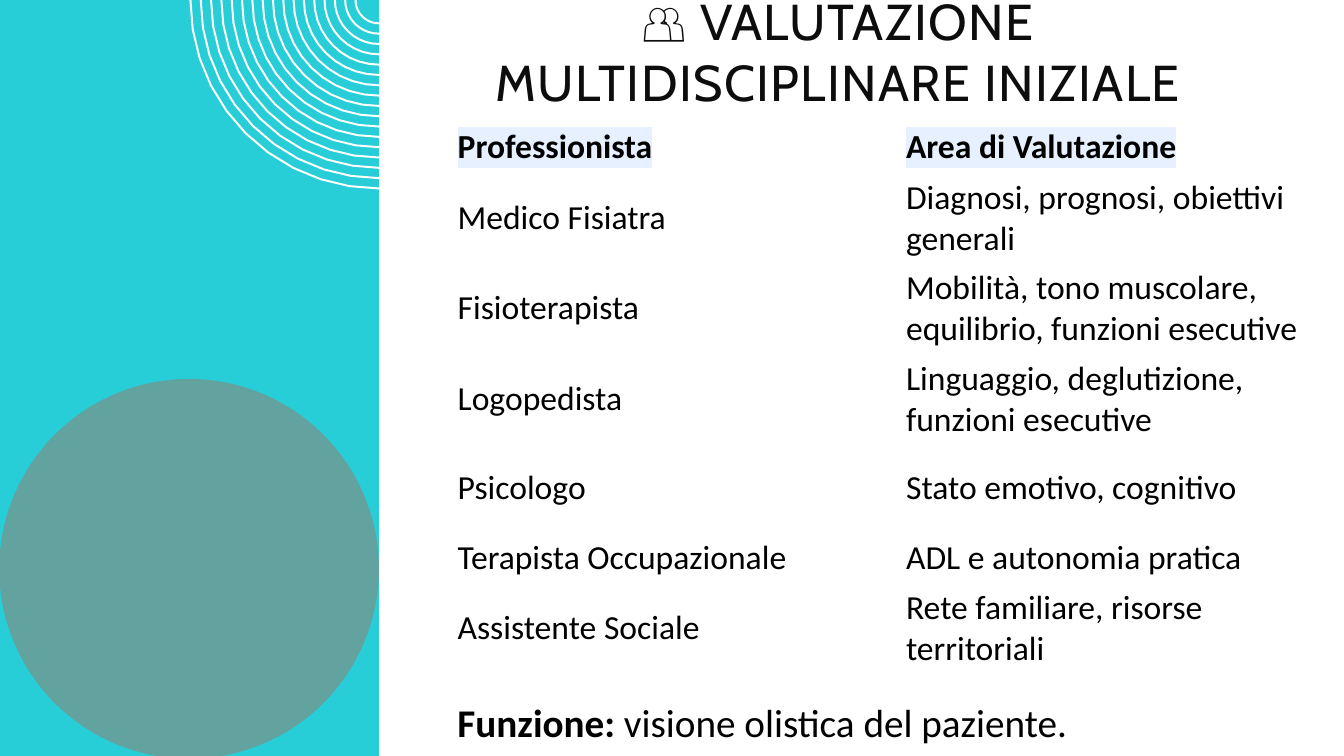
from dataclasses import dataclass
from math import cos, pi, sin

from lxml.etree import SubElement
from pptx import Presentation
from pptx.dml.color import RGBColor as RGB
from pptx.enum.shapes import MSO_SHAPE as Shape
from pptx.enum.text import MSO_ANCHOR as Anchor, PP_ALIGN as Align
from pptx.oxml.ns import qn
from pptx.util import Cm, Pt


@dataclass(frozen=True)
class Theme:
    panel: RGB = RGB(0x27, 0xCE, 0xD7)
    disc: RGB = RGB(0x62, 0xA3, 0x9F)
    white: RGB = RGB(0xFF, 0xFF, 0xFF)
    title: RGB = RGB(0x0D, 0x0D, 0x0D)
    text: RGB = RGB(0, 0, 0)
    highlight: str = "E6F0FE"
    title_font: str = "Cabin"
    body_font: str = "Calibri"
    title_size: int = 36
    note_size: int = 28
    table_size: int = 24


THEME = Theme()

ROWS = [
    ("Professionista", "Area di Valutazione"),
    ("Medico Fisiatra", "Diagnosi, prognosi, obiettivi generali"),
    ("Fisioterapista", "Mobilità, tono muscolare, equilibrio, funzioni esecutive"),
    ("Logopedista", "Linguaggio, deglutizione, funzioni esecutive"),
    ("Psicologo", "Stato emotivo, cognitivo"),
    ("Terapista Occupazionale", "ADL e autonomia pratica"),
    ("Assistente Sociale", "Rete familiare, risorse territoriali"),
]
ROW_HEIGHTS = [1.02, 1.78, 1.78, 1.55, 2.21, 1.02, 1.78]


def add_filled(s, kind, left, top, width, height, color):
    sp = s.shapes.add_shape(kind, Cm(left), Cm(top), Cm(width), Cm(height))
    sp.shadow.inherit = False
    sp.fill.solid()
    sp.fill.fore_color.rgb = color
    sp.line.fill.background()


def add_quarter_rings(s, center_x, radius, step, count, width, color):
    """Concentric quarter rings hanging from the top edge of the slide."""
    steps = 10
    angles = [pi / 2 * (1 + i / steps) for i in range(steps + 1)]
    builder = s.shapes.build_freeform(Cm(center_x), Cm(radius))
    for i in range(count):
        r = radius - i * step
        points = [(Cm(center_x + r * cos(a)), Cm(r * sin(a))) for a in angles]
        if i > 0:
            builder.move_to(*points[0])
        builder.add_line_segments(points[1:], close=False)
    sp = builder.convert_to_shape()
    sp.shadow.inherit = False
    sp.fill.background()
    sp.line.color.rgb = color
    sp.line.width = Cm(width)


def set_font(p, name, size, color, bold=None):
    p.font.name = name
    p.font.size = Pt(size)
    p.font.color.rgb = color
    p.font.bold = bold


def add_text_box(s, left, top, width, height, anchor, bottom=0):
    tf = s.shapes.add_textbox(Cm(left), Cm(top), Cm(width), Cm(height)).text_frame
    tf.word_wrap = True
    tf.vertical_anchor = anchor
    tf.margin_top, tf.margin_bottom = 0, Cm(bottom)
    return tf


def add_title(s, text):
    tf = add_text_box(s, 10.26, 0.99, 21.74, 2.08, Anchor.MIDDLE, bottom=1.5)
    p = tf.paragraphs[0]
    p.alignment = Align.CENTER
    set_font(p, THEME.title_font, THEME.title_size, THEME.title)
    r = p.add_run()
    r.text = text
    r.font._element.set("spc", "100")


def add_note(s, label, text):
    p = add_text_box(s, 11.28, 17.6, 21.74, 2.46, Anchor.TOP).paragraphs[0]
    p.space_after = Pt(2)
    set_font(p, THEME.body_font, THEME.note_size, THEME.text)
    for part, bold in ((label, True), (text, False)):
        r = p.add_run()
        r.text = part
        r.font.bold = bold


def highlight(r, color):
    mark = SubElement(r.font._element, qn("a:highlight"))
    SubElement(mark, qn("a:srgbClr")).set("val", color)


def add_team_table(s, rows, heights):
    frame = s.shapes.add_table(len(rows), 2, Cm(11.28), Cm(3.07), Cm(22.6), Cm(13.89))
    table = frame.table
    table.horz_banding = False
    for row, height in zip(table.rows, heights):
        row.height = Cm(height)
    for i, texts in enumerate(rows):
        for j, text in enumerate(texts):
            cell = table.cell(i, j)
            cell.fill.background()
            cell.vertical_anchor = Anchor.MIDDLE
            p = cell.text_frame.paragraphs[0]
            set_font(p, THEME.body_font, THEME.table_size, THEME.text, bold=i == 0)
            r = p.add_run()
            r.text = text
            # Explicit run values take precedence over the table style
            r.font.bold = i == 0
            r.font.color.rgb = THEME.text
            if i == 0:
                highlight(r, THEME.highlight)


def main():
    prs = Presentation()
    prs.slide_width, prs.slide_height = Cm(33.87), Cm(19.05)
    s = prs.slides.add_slide(prs.slide_layouts[6])

    # Decorated side panel
    add_filled(s, Shape.RECTANGLE, -0.02, 0, 9.57, 19.15, THEME.panel)
    add_quarter_rings(s, 9.55, 4.75, 0.26, 17, 0.05, THEME.white)
    add_filled(s, Shape.OVAL, -0.02, 9.55, 9.57, 9.57, THEME.disc)

    # Title, table and closing note
    add_title(s, "👥 VALUTAZIONE MULTIDISCIPLINARE INIZIALE")
    add_note(s, "Funzione:", " visione olistica del paziente.")
    add_team_table(s, ROWS, ROW_HEIGHTS)

    prs.save("out.pptx")


if __name__ == "__main__":
    main()
